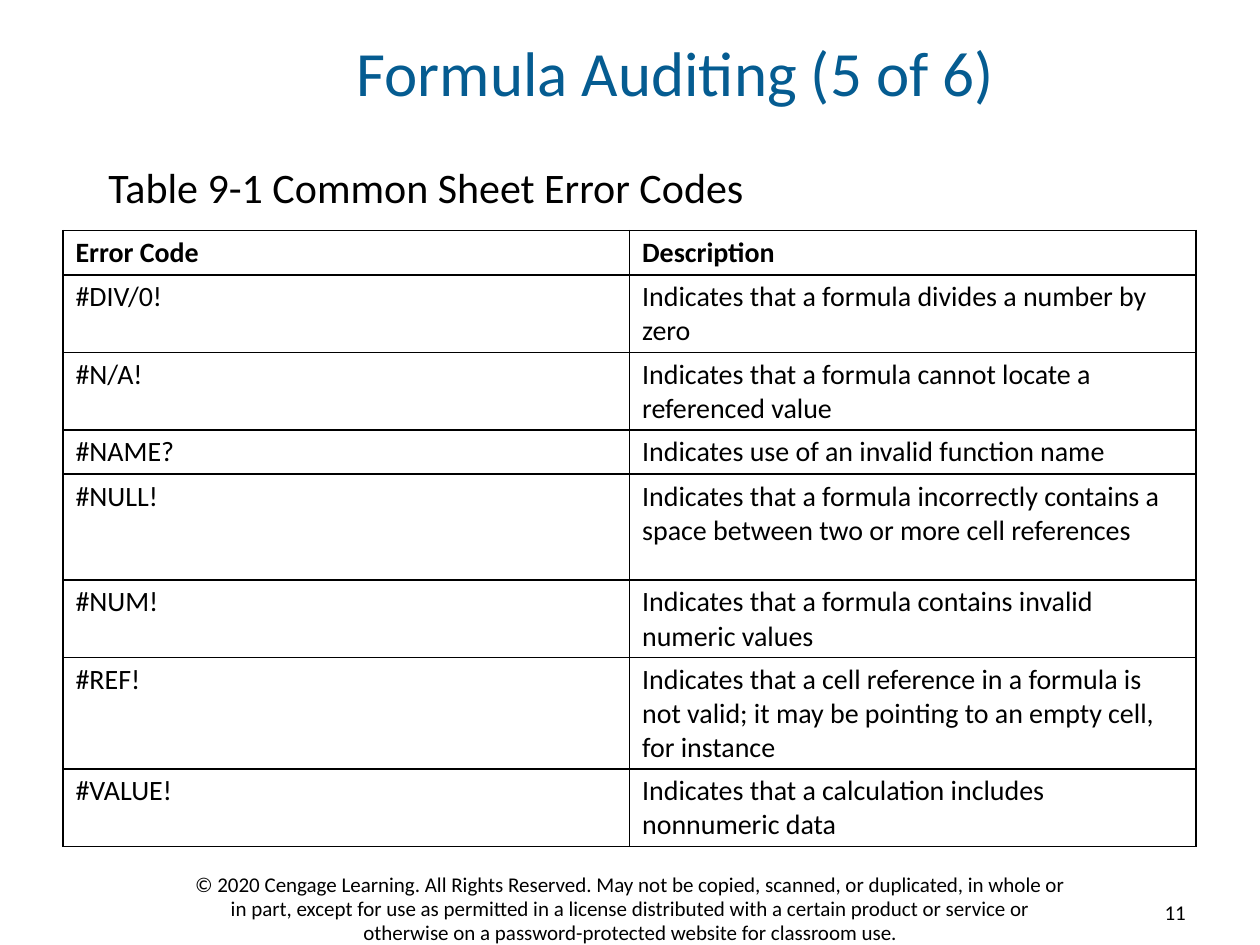
from dataclasses import dataclass
from typing import Any

from lxml import etree
from pptx import Presentation
from pptx.dml.color import RGBColor
from pptx.enum.text import MSO_ANCHOR, PP_ALIGN
from pptx.oxml.ns import qn
from pptx.util import Pt

LEFT, CENTER, RIGHT = PP_ALIGN.LEFT, PP_ALIGN.CENTER, PP_ALIGN.RIGHT
TOP, MIDDLE = MSO_ANCHOR.TOP, MSO_ANCHOR.MIDDLE
COLORS = {"text": "000000", "title": "055C91", "border": "000000"}

ERROR_CODES = [
    ("Error Code", "Description"),
    ("#DIV/0!", "Indicates that a formula divides a number by zero"),
    ("#N/A!", "Indicates that a formula cannot locate a referenced value"),
    ("#NAME?", "Indicates use of an invalid function name"),
    ("#NULL!", "Indicates that a formula incorrectly contains a space between "
               "two or more cell references"),
    ("#NUM!", "Indicates that a formula contains invalid numeric values"),
    ("#REF!", "Indicates that a cell reference in a formula is not valid; "
              "it may be pointing to an empty cell, for instance"),
    ("#VALUE!", "Indicates that a calculation includes nonnumeric data"),
]
ROW_HEIGHTS = [25.2, 44, 44, 25.2, 60.5, 44, 63.4, 44]
COPYRIGHT = (
    "© 2020 Cengage Learning. All Rights Reserved. May not be copied, scanned, "
    "or duplicated, in whole or in part, except for use as permitted in a license "
    "distributed with a certain product or service or otherwise on a "
    "password-protected website for classroom use."
)


@dataclass
class SlideBuilder:
    """Draws styled text and tables on one slide."""

    slide: Any
    font: str = "Calibri"

    def style(self, p, size, color="text", bold=False):
        p.font.name = self.font
        p.font.size = Pt(size)
        p.font.bold = bold
        p.font.color.rgb = RGBColor.from_string(COLORS[color])

    def text(self, text, box, size, color="text", align=LEFT, anchor=TOP,
             spacing=1.0, margins=(0, 0), wrap=True):
        tf = self.slide.shapes.add_textbox(*map(Pt, box)).text_frame
        tf.word_wrap = wrap
        tf.vertical_anchor = anchor
        tf.margin_left = tf.margin_right = Pt(margins[0])
        tf.margin_top = tf.margin_bottom = Pt(margins[1])
        p = tf.paragraphs[0]
        p.text = text
        p.alignment = align
        p.line_spacing = spacing
        self.style(p, size, color)

    def borders(self, cell, width):
        tc_pr = cell._tc.get_or_add_tcPr()
        for side in ("a:lnL", "a:lnR", "a:lnT", "a:lnB"):
            ln = etree.SubElement(tc_pr, qn(side), w=str(Pt(width)))
            fill = etree.SubElement(ln, qn("a:solidFill"))
            etree.SubElement(fill, qn("a:srgbClr"), val=COLORS["border"])

    def table(self, rows, box, heights, size):
        table = self.slide.shapes.add_table(
            len(rows), len(rows[0]), *map(Pt, box)).table
        table.first_row = table.horz_banding = False
        for i, (values, height) in enumerate(zip(rows, heights)):
            table.rows[i].height = Pt(height)
            for j, value in enumerate(values):
                cell = table.cell(i, j)
                cell.text = value
                cell.margin_left = cell.margin_right = Pt(7.2)
                cell.margin_top = cell.margin_bottom = Pt(3)
                self.borders(cell, 1)
                cell.fill.background()
                self.style(cell.text_frame.paragraphs[0], size, bold=i == 0)


def main():
    prs = Presentation()
    prs.slide_width, prs.slide_height = Pt(720), Pt(540)
    s = SlideBuilder(prs.slides.add_slide(prs.slide_layouts[6]))
    s.text("11", (655.2, 510.5, 29.5, 21.6), 12, align=RIGHT, anchor=MIDDLE,
           margins=(7.2, 3.6), wrap=False)
    s.text(COPYRIGHT, (102.2, 495.4, 516.2, 43.2), 12, align=CENTER,
           spacing=0.95, margins=(7.2, 3.6))
    s.text("Formula Auditing (5 of 6)", (59.8, 10.8, 652.3, 67), 36, "title",
           CENTER, MIDDLE, 0.85)
    s.text("Table 9-1 Common Sheet Error Codes", (61.9, 94.3, 424, 25.2), 24,
           spacing=0.95)
    s.table(ERROR_CODES, (36, 131.8, 647.6, sum(ROW_HEIGHTS)), ROW_HEIGHTS, 16)
    prs.save("out.pptx")


if __name__ == "__main__":
    main()
